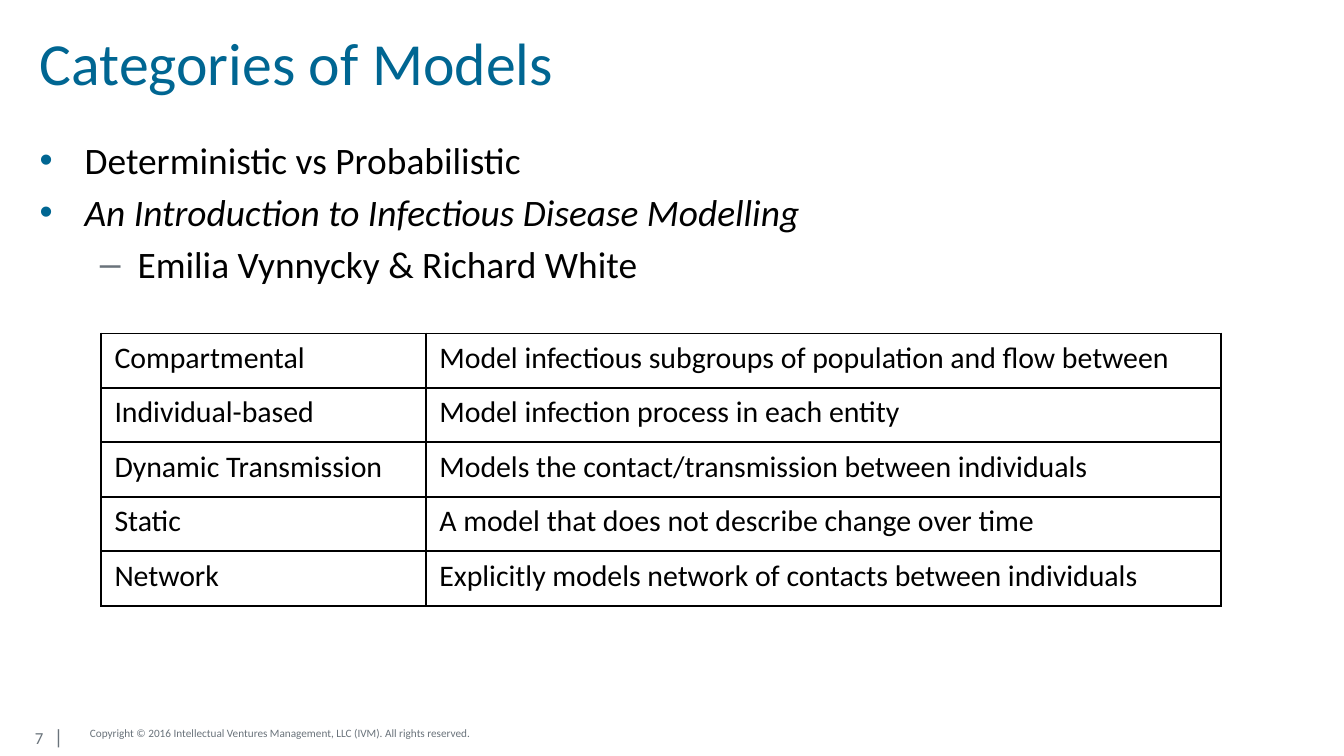
from lxml import etree
from pptx import Presentation
from pptx.dml.color import RGBColor
from pptx.enum import text
from pptx.oxml import ns
from pptx.util import Cm, Pt

FONT = "Calibri"
COLORS = {"accent": "006692", "gray": "6A737B", "ink": "000000"}

BULLETS = [
    ("Deterministic vs Probabilistic", 0, False),
    ("An Introduction to Infectious Disease Modelling", 0, True),
    ("Emilia Vynnycky & Richard White", 1, False),
]
LEVELS = [
    {"left": 0.85, "hang": 0.85, "char": "•", "color": "accent"},
    {"left": 1.85, "hang": 0.71, "char": "–", "color": "gray"},
]
MODELS = [
    ("Compartmental", "Model infectious subgroups of population and flow between"),
    ("Individual-based", "Model infection process in each entity"),
    ("Dynamic Transmission", "Models the contact/transmission between individuals"),
    ("Static", "A model that does not describe change over time"),
    ("Network", "Explicitly models network of contacts between individuals"),
]


def add_run(p, words, size, color, **extra):
    r = p.add_run()
    r.text = words
    r.font.color.rgb = RGBColor.from_string(COLORS[color])
    for name, value in {"name": FONT, "size": Pt(size), **extra}.items():
        setattr(r.font, name, value)


def add_xml(parent, tag, **attrs):
    return etree.SubElement(parent, ns.qn(tag), attrs)


def add_color(parent, color):
    add_xml(parent, "a:srgbClr", val=COLORS[color])


def place(sp, left, top, width, height):
    sp.left, sp.top, sp.width, sp.height = map(Cm, (left, top, width, height))


def format_frame(tf, anchor, side, edge):
    values = {
        "word_wrap": True,
        "auto_size": text.MSO_AUTO_SIZE.NONE,
        "vertical_anchor": anchor,
        "margin_left": Cm(side),
        "margin_right": Cm(side),
        "margin_top": Cm(edge),
        "margin_bottom": Cm(edge),
    }
    for name, value in values.items():
        setattr(tf, name, value)


def add_box(s, box, anchor, side, edge):
    tf = s.shapes.add_textbox(*map(Cm, box)).text_frame
    format_frame(tf, anchor, side, edge)
    return tf


def add_title(s, words):
    sp = s.shapes.title
    place(sp, 0.51, 0.38, 24.26, 1.7)
    format_frame(sp.text_frame, text.MSO_ANCHOR.TOP, 0.24, 0.1)
    p = sp.text_frame.paragraphs[0]
    p.alignment = text.PP_ALIGN.LEFT
    add_run(p, words, 32, "accent")


def add_bullets(s, items):
    tf = add_box(s, (0.51, 2.49, 24.26, 2.97), text.MSO_ANCHOR.TOP, 0.24, 0.1)
    for i, (words, depth, italic) in enumerate(items):
        p = tf.add_paragraph() if i else tf.paragraphs[0]
        p.level = depth
        if i:
            p.space_before = Pt(4)
        level = LEVELS[depth]
        pPr = p._p.get_or_add_pPr()
        pPr.set("marL", str(Cm(level["left"])))
        pPr.set("indent", str(-Cm(level["hang"])))
        add_color(add_xml(pPr, "a:buClr"), level["color"])
        add_xml(pPr, "a:buFont", typeface="Arial")
        add_xml(pPr, "a:buChar", char=level["char"])
        add_run(p, words, 20, "ink", italic=italic)


def add_borders(cell):
    tcPr = cell._tc.get_or_add_tcPr()
    for side in "LRTB":
        line = add_xml(tcPr, f"a:ln{side}", w=str(Pt(1)))
        add_color(add_xml(line, "a:solidFill"), "ink")


def add_models_table(s, rows):
    widths, row_height = (6.14, 15.03), 1.03
    box = (1.91, 6.3, sum(widths), row_height * len(rows))
    table = s.shapes.add_table(len(rows), len(widths), *map(Cm, box)).table
    table.first_row = table.horz_banding = False
    for column, width in zip(table.columns, widths):
        column.width = Cm(width)
    for row, values in zip(table.rows, rows):
        row.height = Cm(row_height)
        for cell, words in zip(row.cells, values):
            add_borders(cell)
            cell.fill.background()
            add_run(cell.text_frame.paragraphs[0], words, 16, "ink")


def add_footer(s):
    middle = text.MSO_ANCHOR.MIDDLE
    p = add_box(s, (0.51, 13.39, 1.07, 1.04), middle, 0.15, 0.08).paragraphs[0]
    tabs = add_xml(p._p.get_or_add_pPr(), "a:tabLst")
    add_xml(tabs, "a:tab", pos=str(Cm(0.36)), algn="l")
    add_run(p, "7\t", 9, "gray")
    add_run(p, "|", 11, "gray")
    p = add_box(s, (1.55, 13.55, 8.05, 0.6), middle, 0.15, 0.08).paragraphs[0]
    add_run(p, "Copyright © 2016 Intellectual Ventures Management, LLC (IVM). "
            "All rights reserved.", 6, "gray")


def main():
    prs = Presentation()
    prs.slide_width, prs.slide_height = Cm(25.4), Cm(14.29)
    s = prs.slides.add_slide(prs.slide_layouts[5])
    add_footer(s)
    add_title(s, "Categories of Models")
    add_bullets(s, BULLETS)
    add_models_table(s, MODELS)
    prs.save("out.pptx")


if __name__ == "__main__":
    main()
